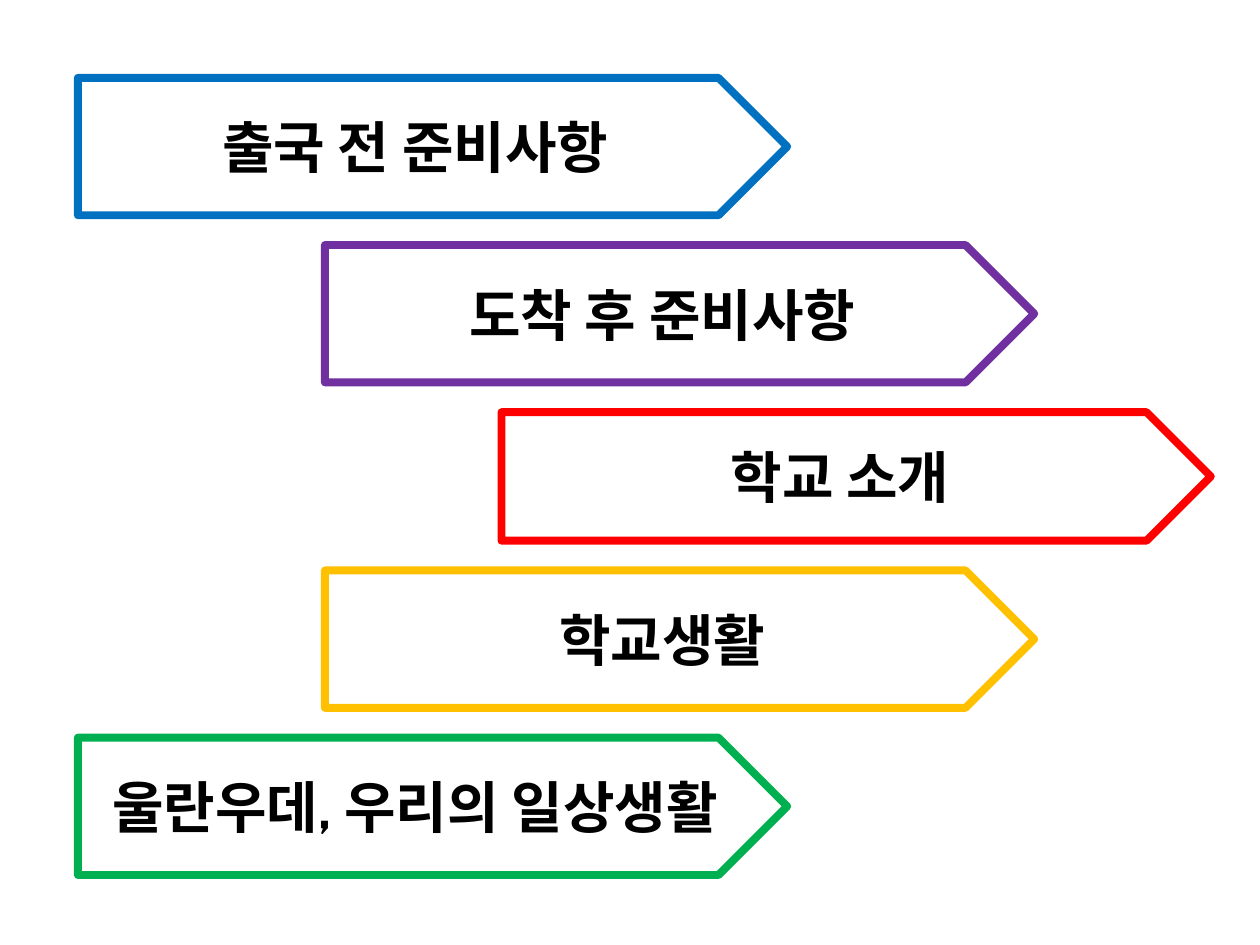
from pptx import Presentation
from pptx.dml.color import RGBColor
from pptx.enum.shapes import MSO_SHAPE
from pptx.enum.text import MSO_ANCHOR, PP_ALIGN
from pptx.util import Cm, Pt

COLORS = {
    "blue": "0070C0",
    "purple": "7030A0",
    "red": "FF0000",
    "gold": "FFC000",
    "green": "00B050",
    "white": "FFFFFF",
    "black": "000000",
}
FONT = {"name": "Cabin", "size": Pt(32), "bold": True}
LEFT, MIDDLE, RIGHT = 1.57, 6.55, 10.11
TOP, WIDTH, GAP = 1.57, 14.3, 0.6
TALL, SHORT = 2.77, 2.59

# text, left, height, outline colour
STEPS = [
    ("출국 전 준비사항", LEFT, TALL, "blue"),
    ("도착 후 준비사항", MIDDLE, TALL, "purple"),
    ("학교 소개", RIGHT, SHORT, "red"),
    ("학교생활", MIDDLE, TALL, "gold"),
    ("울란우데, 우리의 일상생활", LEFT, TALL, "green"),
]


class Deck:
    def __init__(self, slide, font):
        self.slide = slide
        self.font = font

    def color(self, name):
        return RGBColor.from_string(COLORS[name])

    def arrow(self, text, left, top, height, edge):
        """Add a white pentagon arrow with a coloured outline and centred text."""
        shape = self.slide.shapes.add_shape(
            MSO_SHAPE.PENTAGON, Cm(left), Cm(top), Cm(WIDTH), Cm(height))
        shape.shadow.inherit = False
        shape.fill.solid()
        shape.fill.fore_color.rgb = self.color("white")
        shape.line.color.rgb = self.color(edge)
        shape.line.width = Pt(4.5)
        frame = shape.text_frame
        frame.word_wrap = True
        frame.vertical_anchor = MSO_ANCHOR.MIDDLE
        line = frame.paragraphs[0]
        line.alignment = PP_ALIGN.CENTER
        run = line.add_run()
        run.text = text
        for key, value in self.font.items():
            setattr(run.font, key, value)
        run.font.color.rgb = self.color("black")


def main():
    prs = Presentation()
    prs.slide_width, prs.slide_height = Cm(25.4), Cm(19.05)
    deck = Deck(prs.slides.add_slide(prs.slide_layouts[6]), FONT)
    top = TOP
    for text, left, height, edge in STEPS:
        deck.arrow(text, left, top, height, edge)
        top += height + GAP
    prs.save("out.pptx")


if __name__ == "__main__":
    main()
